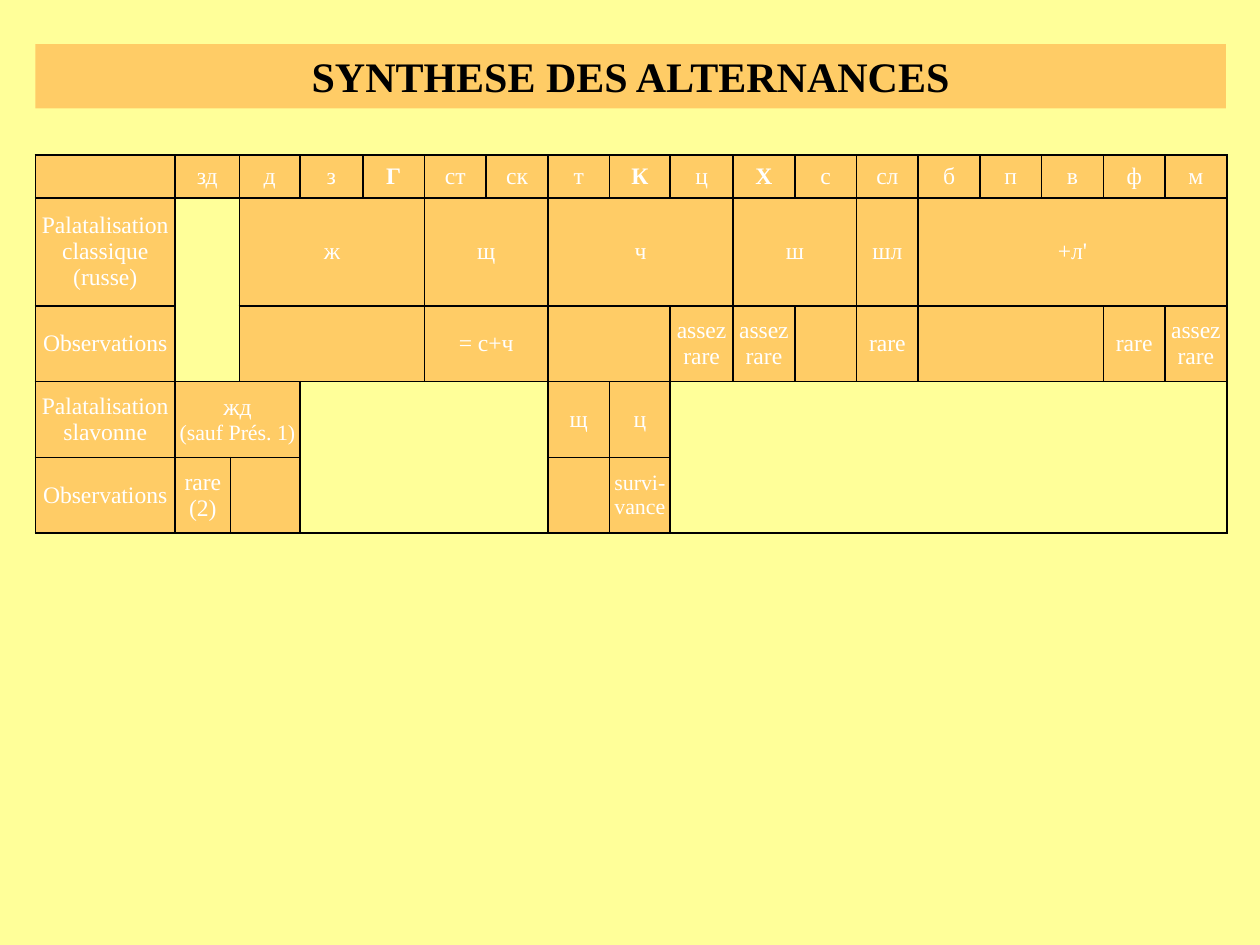
from lxml import etree
from pptx import Presentation
from pptx.dml.color import RGBColor
from pptx.enum.shapes import MSO_SHAPE
from pptx.enum.text import MSO_ANCHOR, MSO_AUTO_SIZE, PP_ALIGN
from pptx.oxml.ns import qn
from pptx.util import Inches, Pt

COLORS = {"page": "FFFF99", "box": "FFCC66", "title": "000000",
          "text": "FFFFFF", "line": "000000"}
FONT = "Times New Roman"
LEFT, WIDTH = 0.28, 9.45
COLS = [1.11, 0.44, 0.07, 0.48, 0.5] + [0.49] * 4 + [0.48, 0.5] + [0.49] * 8
ROWS = [0.34, 0.86, 0.6, 0.6, 0.6]
LETTERS = "д з Г ст ск т К ц Х с сл б п в ф м".split()
VELARS = ("Г", "К", "Х")

# Each cell is (column, columns spanned, text); None marks an open area two rows high.
GRID = [
    [(0, 1, ""), (1, 2, "зд")] + [(3 + i, 1, s) for i, s in enumerate(LETTERS)],
    [(0, 1, "Palatalisation classique (russe)"), (1, 2, None), (3, 3, "ж"),
     (6, 2, "щ"), (8, 3, "ч"), (11, 2, "ш"), (13, 1, "шл"), (14, 5, "+л'")],
    [(0, 1, "Observations"), (3, 3, ""), (6, 2, "= с+ч"), (8, 2, ""),
     (10, 1, "assez rare"), (11, 1, "assez rare"), (12, 1, ""), (13, 1, "rare"),
     (14, 3, ""), (17, 1, "rare"), (18, 1, "assez rare")],
    [(0, 1, "Palatalisation slavonne"), (1, 3, "жд\n(sauf Prés. 1)"),
     (4, 4, None), (8, 1, "щ"), (9, 1, "ц"), (10, 9, None)],
    [(0, 1, "Observations"), (1, 1, "rare (2)"), (2, 2, ""), (8, 1, ""),
     (9, 1, "survi-vance")],
]
SMALL = ("(sauf Prés. 1)", "survi-vance")


class Deck:
    def __init__(self):
        self.show = Presentation()
        self.show.slide_width, self.show.slide_height = Inches(10), Inches(7.5)
        self.slide = self.show.slides.add_slide(self.show.slide_layouts[6])
        self.paint(self.slide.background.fill, "page")

    def paint(self, fill, name):
        fill.solid()
        fill.fore_color.rgb = RGBColor.from_string(COLORS[name])

    def style(self, para, size, name, bold=False):
        para.alignment = PP_ALIGN.CENTER
        for run in para.runs:
            font = run.font
            font.name, font.size, font.bold = FONT, Pt(size), bold
            font.color.rgb = RGBColor.from_string(COLORS[name])

    def title(self, text, top, height):
        box = self.slide.shapes.add_shape(
            MSO_SHAPE.RECTANGLE, Inches(LEFT), Inches(top), Inches(WIDTH), Inches(height))
        box.shadow.inherit = False
        self.paint(box.fill, "box")
        box.line.fill.background()
        frame = box.text_frame
        frame.text = text
        frame.word_wrap = True
        frame.auto_size = MSO_AUTO_SIZE.SHAPE_TO_FIT_TEXT
        frame.vertical_anchor = MSO_ANCHOR.TOP
        frame.paragraphs[0].space_before = Pt(15)
        self.style(frame.paragraphs[0], 24, "title", True)

    def border(self, cell):
        props = cell._tc.get_or_add_tcPr()
        for i, tag in enumerate(("a:lnL", "a:lnR", "a:lnT", "a:lnB")):
            line = etree.Element(qn(tag), w=str(Pt(1)))
            fill = etree.SubElement(line, qn("a:solidFill"))
            etree.SubElement(fill, qn("a:srgbClr"), val=COLORS["line"])
            props.insert(i, line)

    def pad(self, cell, gap):
        cell.margin_left = cell.margin_right = Inches(gap)
        cell.margin_top = cell.margin_bottom = Inches(gap)

    def label(self, cell, text):
        self.pad(cell, 0.03)
        cell.vertical_anchor = MSO_ANCHOR.MIDDLE
        cell.text_frame.text = text
        for para in cell.text_frame.paragraphs:
            size = 12.5 if para.text in SMALL else 13.5
            self.style(para, size, "text", para.text in VELARS)

    def table(self, top):
        table = self.slide.shapes.add_table(
            len(ROWS), len(COLS), Inches(LEFT), Inches(top),
            Inches(WIDTH), Inches(sum(ROWS))).table
        table.first_row = table.horz_banding = False
        for col, width in zip(table.columns, COLS):
            col.width = Inches(width)
        for row, height in zip(table.rows, ROWS):
            row.height = Inches(height)
        for cell in table.iter_cells():
            cell.fill.background()
            self.pad(cell, 0)
            self.border(cell)
        for r, cells in enumerate(GRID):
            for c, span, text in cells:
                cell = table.cell(r, c)
                tall = 2 if text is None else 1
                if span * tall > 1:
                    cell.merge(table.cell(r + tall - 1, c + span - 1))
                if text is not None:
                    self.paint(cell.fill, "box")
                if text:
                    self.label(cell, text)


def main():
    deck = Deck()
    deck.title("SYNTHESE DES ALTERNANCES", 0.35, 0.51)
    deck.table(1.23)
    deck.show.save("out.pptx")


if __name__ == "__main__":
    main()
